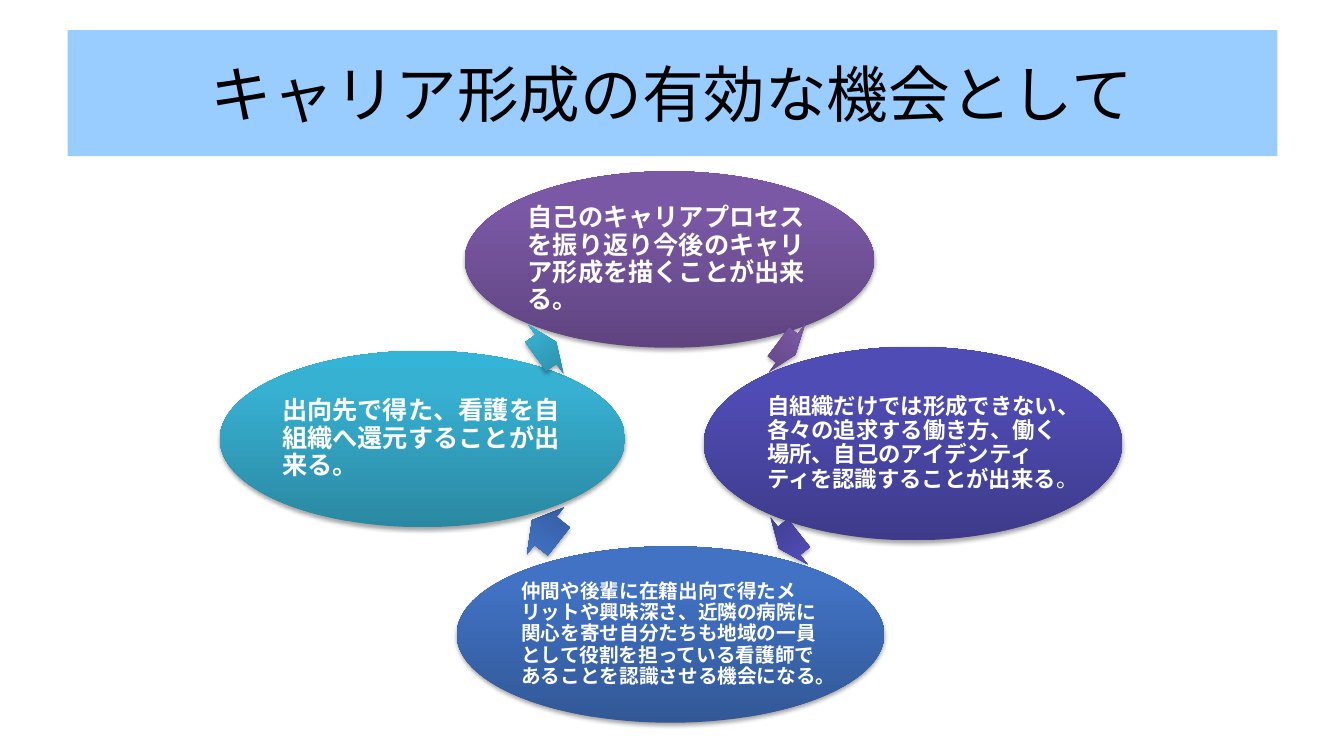
import dataclasses

import lxml.etree
import pptx
import pptx.dml.color
import pptx.enum.lang
import pptx.enum.shapes
import pptx.enum.text
import pptx.oxml.ns
import pptx.util

Inches = pptx.util.Inches
Pt = pptx.util.Pt
RGBColor = pptx.dml.color.RGBColor
Shape = pptx.enum.shapes.MSO_SHAPE
Align = pptx.enum.text.PP_ALIGN
Anchor = pptx.enum.text.MSO_ANCHOR
qn = pptx.oxml.ns.qn


@dataclasses.dataclass(frozen=True)
class Theme:
    font: str = "Noto Sans CJK JP"
    title_size: int = 44
    title_color: str = "000000"
    title_fill: str = "99CCFF"
    text_color: str = "FFFFFF"
    shadow_color: str = "000000"
    large: int = 18
    medium: int = 16
    small: int = 14
    stops: tuple = (0, 80, 100)
    purple: tuple = ("5F4480", "7B58A6", "7C57A8")
    indigo: tuple = ("3E3B8B", "504CB5", "4F4BB8")
    blue: tuple = ("325897", "4172C4", "3F72C7")
    teal: tuple = ("2A88A2", "37B1D2", "34B4D6")


def add_element(parent, tag, **attributes):
    element = lxml.etree.SubElement(parent, qn(tag))
    for name, value in attributes.items():
        element.set(name, str(value))
    return element


def apply(target, values):
    for name, value in values.items():
        setattr(target, name, value)


class SlideBuilder:
    def __init__(self, theme, slide):
        self.theme = theme
        self.slide = slide

    def add_span(self, para, text, size, color, bold):
        span = para.add_run()
        span.text = text
        apply(span.font, {
            "name": self.theme.font,
            "size": Pt(size),
            "bold": bold,
            "language_id": pptx.enum.lang.MSO_LANGUAGE_ID.JAPANESE,
        })
        span.font.color.rgb = RGBColor.from_string(color)
        add_element(span.font._element, "a:ea", typeface=self.theme.font)

    def title(self, text, left, top, width, height):
        box = self.slide.shapes.title
        apply(box, {
            "left": Inches(left), "top": Inches(top),
            "width": Inches(width), "height": Inches(height),
        })
        box.fill.solid()
        box.fill.fore_color.rgb = RGBColor.from_string(self.theme.title_fill)
        box.text_frame.vertical_anchor = Anchor.MIDDLE
        para = box.text_frame.paragraphs[0]
        para.alignment = Align.CENTER
        self.add_span(para, text, self.theme.title_size, self.theme.title_color, False)

    def gradient_shape(self, kind, place, colors):
        shape = self.slide.shapes.add_shape(kind, *map(Inches, place))
        shape.line.fill.background()
        shape.fill.gradient()
        shape.fill.gradient_angle = 90
        properties = shape._element.spPr
        stop_list = properties.find(".//" + qn("a:gsLst"))
        for stop in list(stop_list):
            stop_list.remove(stop)
        for position, color in zip(self.theme.stops, colors):
            stop = add_element(stop_list, "a:gs", pos=position * 1000)
            add_element(stop, "a:srgbClr", val=color)
        shape.shadow.inherit = False
        shadow = add_element(
            properties.find(qn("a:effectLst")), "a:outerShdw",
            blurRad=Pt(3.1), dist=Pt(1.8), dir=90 * 60000, rotWithShape=0)
        shade = add_element(shadow, "a:srgbClr", val=self.theme.shadow_color)
        add_element(shade, "a:alpha", val=35000)
        return shape

    def bubble(self, place, colors, size, inset, spans):
        bubble = self.gradient_shape(Shape.OVAL, place, colors)
        frame = bubble.text_frame
        sides = ("left", "top", "right", "bottom")
        apply(frame, {f"margin_{side}": Inches(inset) for side in sides})
        apply(frame, {"word_wrap": True, "vertical_anchor": Anchor.MIDDLE})
        para = frame.paragraphs[0]
        apply(para, {"alignment": Align.LEFT, "line_spacing": 0.9})
        for text, bold in spans:
            self.add_span(para, text, size, self.theme.text_color, bold)

    def arrow(self, place, rotation, colors):
        arrow = self.gradient_shape(Shape.RIGHT_ARROW, place, colors)
        arrow.rotation = rotation
        arrow.adjustments[0] = 0.6
        arrow.adjustments[1] = 0.5


def main():
    deck = pptx.Presentation()
    deck.slide_width = Inches(13.33)
    deck.slide_height = Inches(7.5)
    page = deck.slides.add_slide(deck.slide_layouts[5])
    theme = Theme()
    builder = SlideBuilder(theme, page)
    builder.title("キャリア形成の有効な機会として", 0.67, 0.3, 12, 1.25)

    cycle = [
        (theme.purple, (4.61, 1.7, 4.06, 1.75), theme.large, 0.03,
         [("自己のキャリアプロセスを振り返り今後のキャリア形成を描くことが出来る。", True)],
         (7.7, 3.16, 0.21, 0.59), 37),
        (theme.indigo, (6.98, 3.44, 4.15, 1.92), theme.medium, 0.02,
         [("自組織だけでは形成できない、各々の追求する働き方、働く場所、"
           "自己のアイデンティティを認識することが出来る", True), ("。", False)],
         (7.7, 5.07, 0.25, 0.59), 141.8),
        (theme.blue, (4.53, 5.42, 4.24, 1.75), theme.small, 0.02,
         [("仲間や後輩に在籍出向で得たメリットや興味深さ、近隣の病院に関心を寄せ"
           "自分たちも地域の一員として役割を担っている看護師であることを"
           "認識させる機会になる。", True)],
         (5.24, 4.97, 0.34, 0.59), 218.3),
        (theme.teal, (2.18, 3.48, 4.02, 1.75), theme.large, 0.03,
         [("出向先で得た、看護を自組織へ還元することが出来る。", True)],
         (5.29, 3.17, 0.25, 0.59), 324.2),
    ]
    for colors, place, size, inset, spans, arrow_place, rotation in cycle:
        builder.bubble(place, colors, size, inset, spans)
        builder.arrow(arrow_place, rotation, colors)

    deck.save("out.pptx")


if __name__ == "__main__":
    main()
